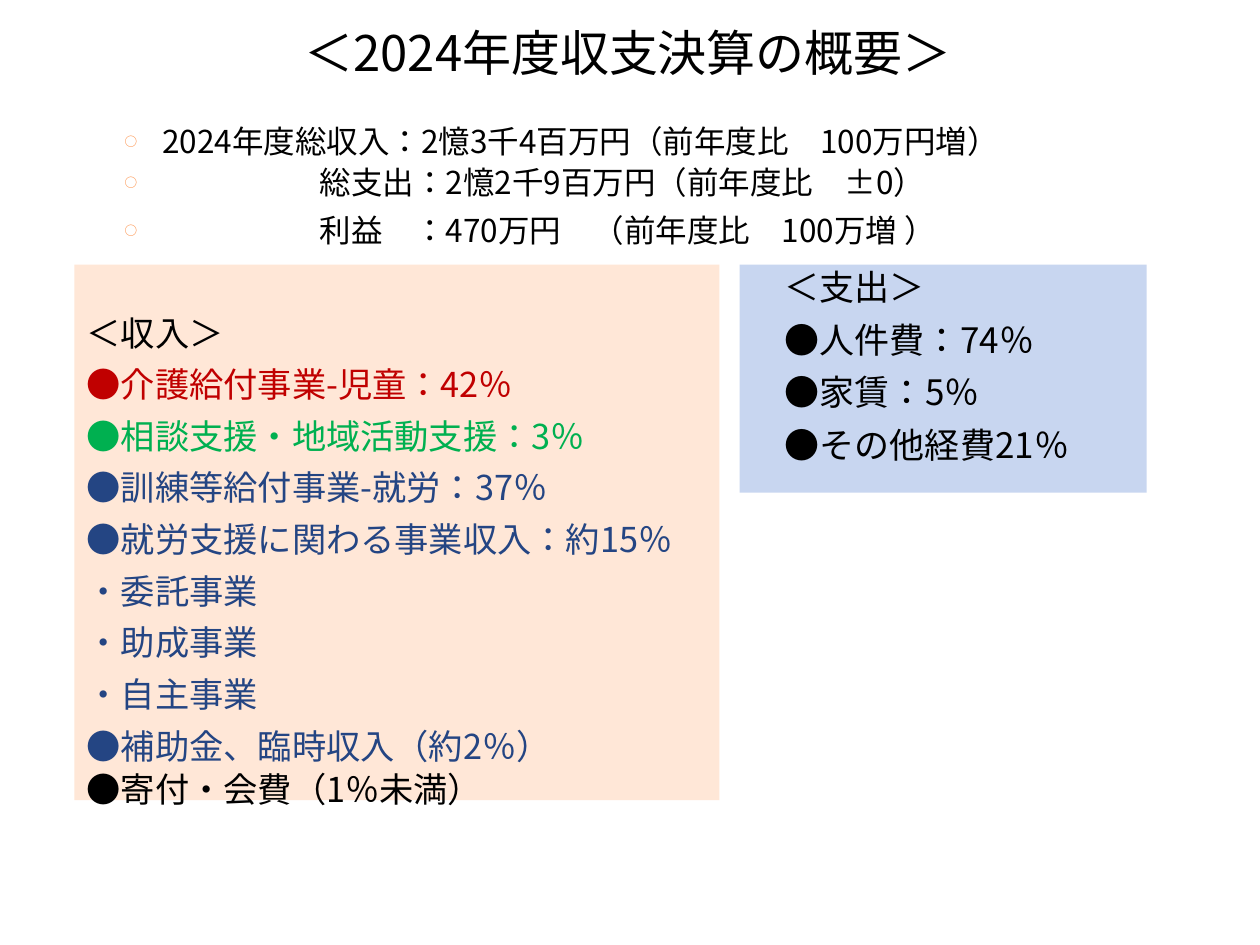
from pptx import Presentation
from pptx.dml.color import RGBColor
from pptx.enum.lang import MSO_LANGUAGE_ID
from pptx.enum.shapes import MSO_SHAPE
from pptx.oxml.ns import qn
from pptx.util import Inches, Pt
from lxml.etree import SubElement

FONT = "Noto Sans CJK JP"
COLORS = {
    "black": "000000", "red": "C00000", "green": "00B050", "navy": "244583",
    "bullet": "FE8637", "income": "FFE7D7", "expense": "C8D6F0",
}
HANG = 0.3      # hanging indent, inches
DEEP = 1.55     # indent that lines the lower summary rows up
TIGHT = 0.8     # line spacing of the compact rows

# Panels: colour, (left, top, width, height) in inches
PANELS = [
    ("expense", (5.87, 2.1, 3.23, 1.81)),
    ("income", (0.59, 2.1, 5.12, 4.25)),
]

# Rows: text, colour, line spacing, indent
TITLE = [("＜2024年度収支決算の概要＞", "black", 1, HANG)]
SUMMARY = [
    ("2024年度総収入：2憶3千4百万円（前年度比　100万円増）", "black", TIGHT, HANG),
    ("総支出：2憶2千9百万円（前年度比　±0）", "black", TIGHT, DEEP),
    ("利益　：470万円　（前年度比　100万増 ）", "black", 1, DEEP),
]
INCOME = [
    ("＜収入＞", "black", TIGHT, HANG),
    ("●介護給付事業-児童：42％", "red", 1, HANG),
    ("●相談支援・地域活動支援：3％", "green", 1, HANG),
    ("●訓練等給付事業-就労：37％", "navy", 1, HANG),
    ("●就労支援に関わる事業収入：約15％", "navy", 1, HANG),
    ("・委託事業", "navy", 1, HANG),
    ("・助成事業", "navy", 1, HANG),
    ("・自主事業", "navy", 1, HANG),
    ("●補助金、臨時収入（約2％）", "navy", 1, HANG),
    ("●寄付・会費（1％未満）", "black", TIGHT, HANG),
]
EXPENSE = [(text, "black", 1, HANG) for text in
           ("＜支出＞", "●人件費：74％", "●家賃：5％", "●その他経費21％")]

# Text blocks: rows, place, point size, bulleted
BLOCKS = [
    (TITLE, (2.32, 0.13, 5.83, 0.87), 28, False),
    (INCOME, (0.59, 2.49, 6.22, 3.78), 19.6, False),
    (EXPENSE, (6.13, 2.06, 2.99, 2), 20, False),
    (SUMMARY, (0.89, 0.98, 8.44, 1.11), 18, True),
]


def color(name):
    return RGBColor.from_string(COLORS[name])


def place(lengths):
    return [Inches(length) for length in lengths]


def format_paragraph(para, indent, bulleted):
    """Set the hanging indent and, if wanted, the ring bullet."""
    properties = para._p.get_or_add_pPr()
    properties.set("marL", str(Inches(indent)))
    properties.set("indent", str(-Inches(indent)))
    if not bulleted:
        SubElement(properties, qn("a:buNone"))
        return
    tint = SubElement(properties, qn("a:buClr"))
    SubElement(tint, qn("a:srgbClr"), val=COLORS["bullet"])
    SubElement(properties, qn("a:buSzPct"), val="40000")
    SubElement(properties, qn("a:buFont"), typeface=FONT)
    SubElement(properties, qn("a:buChar"), char="○")


def add_panel(slide, fill, area):
    panel = slide.shapes.add_shape(MSO_SHAPE.RECTANGLE, *place(area))
    panel.shadow.inherit = False
    panel.fill.solid()
    panel.fill.fore_color.rgb = color(fill)
    panel.line.fill.background()


def add_block(slide, rows, area, size, bulleted):
    frame = slide.shapes.add_textbox(*place(area)).text_frame
    frame.word_wrap = True
    for index, (text, ink, spacing, indent) in enumerate(rows):
        para = frame.add_paragraph() if index else frame.paragraphs[0]
        para.line_spacing = spacing
        para.space_before = Pt(6)
        format_paragraph(para, indent, bulleted)
        span = para.add_run()
        span.text = text
        span.font.size = Pt(size)
        span.font.color.rgb = color(ink)
        span.font.name = FONT
        span.font.language_id = MSO_LANGUAGE_ID.JAPANESE
        SubElement(span.font._element, qn("a:ea"), typeface=FONT)


def main():
    deck = Presentation()
    deck.slide_width, deck.slide_height = Inches(10), Inches(7.5)
    slide = deck.slides.add_slide(deck.slide_layouts[6])
    for panel in PANELS:
        add_panel(slide, *panel)
    for block in BLOCKS:
        add_block(slide, *block)
    deck.save("out.pptx")


if __name__ == "__main__":
    main()
